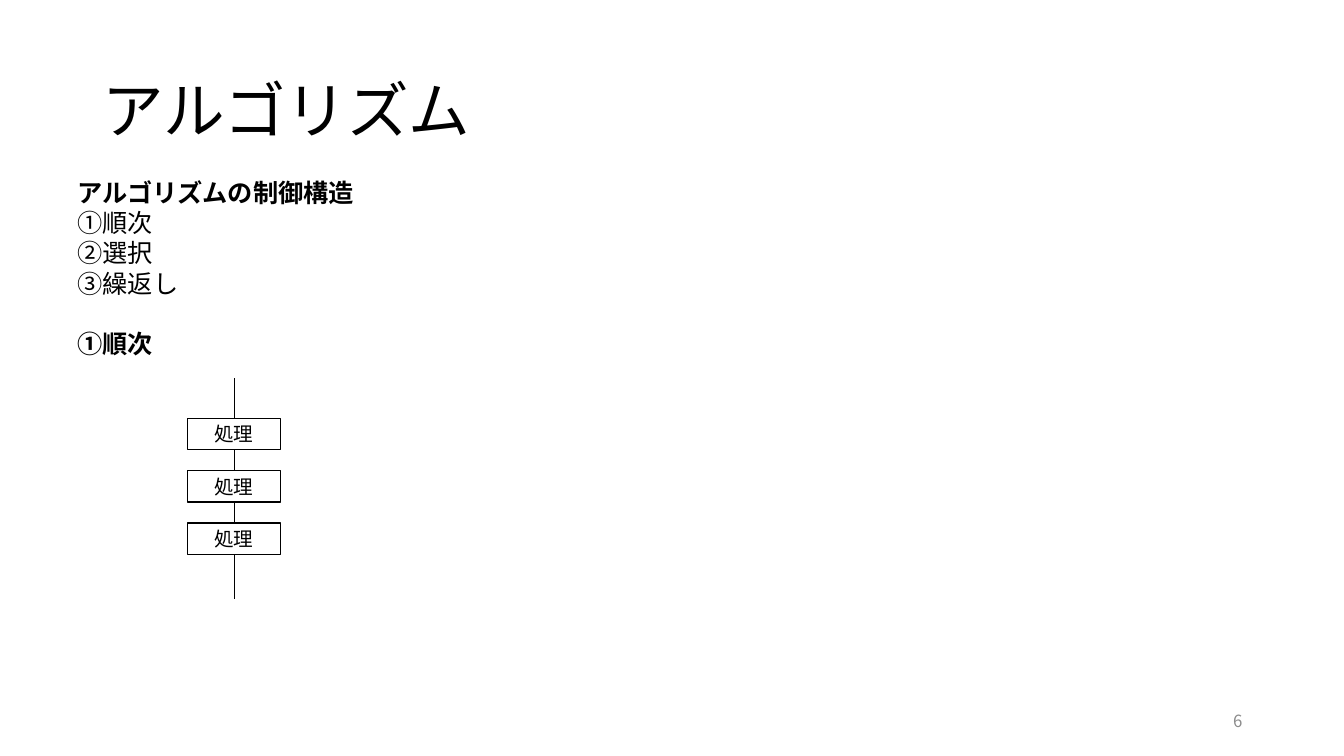
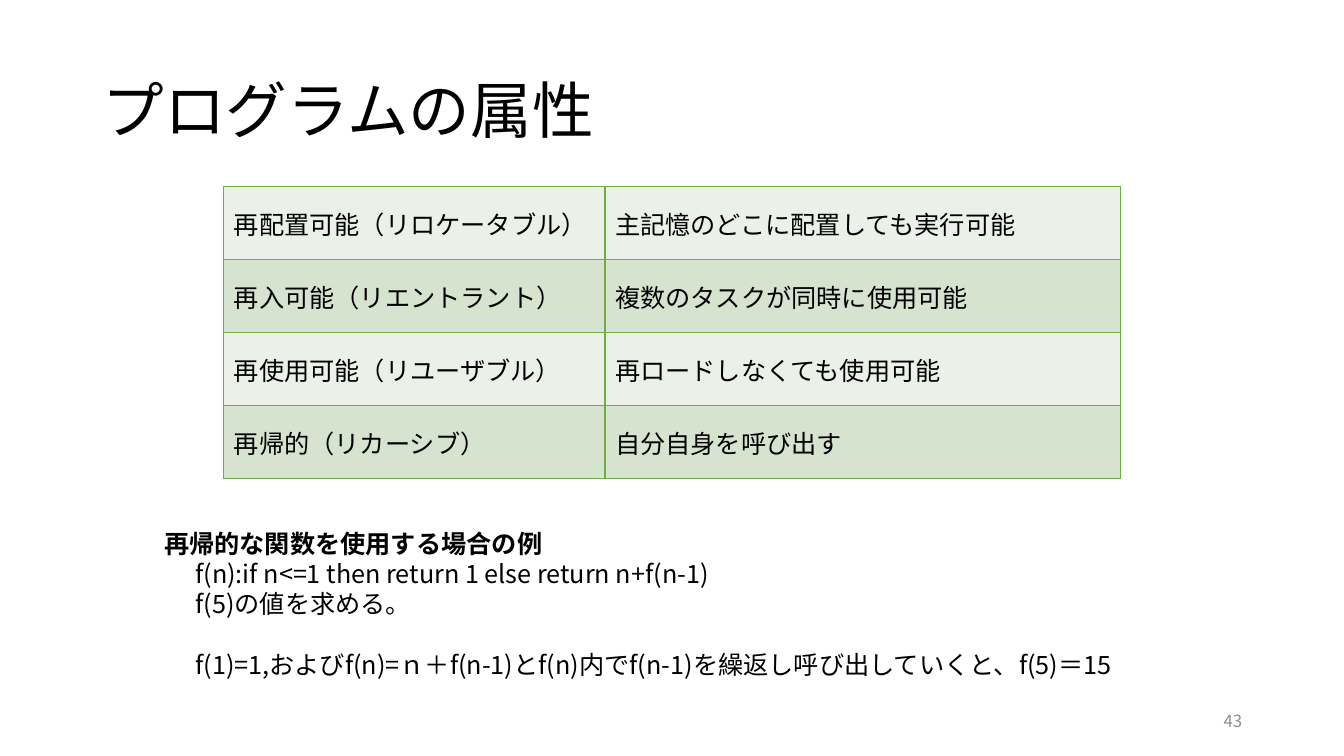
from lxml import etree
from pptx import Presentation
from pptx.dml.color import RGBColor
from pptx.enum.shapes import MSO_CONNECTOR, MSO_SHAPE
from pptx.enum.text import MSO_ANCHOR, PP_ALIGN
from pptx.oxml.ns import qn
from pptx.util import Inches, Pt

RECTANGLE, STRAIGHT = MSO_SHAPE.RECTANGLE, MSO_CONNECTOR.STRAIGHT
TOP, MIDDLE = MSO_ANCHOR.TOP, MSO_ANCHOR.MIDDLE
LEFT, CENTER, RIGHT = PP_ALIGN.LEFT, PP_ALIGN.CENTER, PP_ALIGN.RIGHT

JAPANESE_FONT, LATIN_FONT = "Noto Sans CJK JP", "Arial"
BLACK, WHITE, GRAY, GREEN = "000000", "FFFFFF", "8C8C8C", "70AD47"
ROW_FILLS = ["EBF1E9", "D5E3CF"]
BLANK_LAYOUT = 6
SECTION_GAP = 21.6

CONTROL_LINES = [
    ("アルゴリズムの制御構造", {"bold": True}),
    ("①順次", {}),
    ("②選択", {}),
    ("③繰返し", {}),
    ("①順次", {"bold": True, "before": SECTION_GAP}),
]
SEQUENCE_STEPS = ["処理", "処理", "処理"]
ATTRIBUTES = [
    ("再配置可能（リロケータブル）", "主記憶のどこに配置しても実行可能"),
    ("再入可能（リエントラント）", "複数のタスクが同時に使用可能"),
    ("再使用可能（リユーザブル）", "再ロードしなくても使用可能"),
    ("再帰的（リカーシブ）", "自分自身を呼び出す"),
]
RECURSION_LINES = [
    ("再帰的な関数を使用する場合の例", {"bold": True}),
    ("f(n):if n<=1 then return 1 else return n+f(n-1)", {"indent": 0.31}),
    ("f(5)の値を求める。", {"indent": 0.31}),
    ("f(1)=1,およびf(n)=ｎ＋f(n-1)とf(n)内でf(n-1)を繰返し呼び出していくと、f(5)＝15",
     {"indent": 0.31, "before": SECTION_GAP}),
]


def color(value):
    return RGBColor.from_string(value)


def write(paragraph, text, size=18, font=JAPANESE_FONT, fill=BLACK, bold=False,
          align=LEFT, before=0, spacing=None, indent=0):
    paragraph.alignment = align
    paragraph.line_spacing = spacing
    if before:
        paragraph.space_before = Pt(before)
    if indent:
        paragraph._p.get_or_add_pPr().set("marL", str(Inches(indent)))
    run = paragraph.add_run()
    run.text = text
    run.font.size = Pt(size)
    run.font.bold = bold
    run.font.name = font
    run.font.color.rgb = color(fill)
    east_asian = etree.SubElement(run._r.get_or_add_rPr(), qn("a:ea"))
    east_asian.set("typeface", JAPANESE_FONT)


def add_text(slide, box, lines, anchor=TOP, **shared):
    frame = slide.shapes.add_textbox(*map(Inches, box)).text_frame
    frame.word_wrap = True
    frame.vertical_anchor = anchor
    for index, (text, style) in enumerate(lines):
        paragraph = frame.add_paragraph() if index else frame.paragraphs[0]
        write(paragraph, text, **shared, **style)


def add_slide(presentation, title, number):
    slide = presentation.slides.add_slide(presentation.slide_layouts[BLANK_LAYOUT])
    add_text(slide, (0.92, 0.4, 11.5, 1.45), [(title, {})], MIDDLE, size=44, spacing=0.9)
    add_text(slide, (9.42, 6.95, 3, 0.4), [(number, {})], MIDDLE,
             size=12, fill=GRAY, align=RIGHT)
    return slide


def add_sequence(slide, steps):
    center, top, width, height, pitch = 2.32, 4.15, 0.92, 0.31, 0.52
    shapes = slide.shapes.add_group_shape().shapes
    flow = shapes.add_connector(STRAIGHT, Inches(center), Inches(3.75),
                                Inches(center), Inches(5.94))
    flow.line.color.rgb = color(BLACK)
    flow.line.width = Pt(0.5)
    etree.SubElement(flow._element.spPr, qn("a:effectLst"))
    for index, text in enumerate(steps):
        box = (center - width / 2, top + index * pitch, width, height)
        shape = shapes.add_shape(RECTANGLE, *map(Inches, box))
        shape.shadow.inherit = False
        shape.fill.solid()
        shape.fill.fore_color.rgb = color(WHITE)
        shape.line.color.rgb = color(BLACK)
        shape.line.width = Pt(1)
        shape.text_frame.vertical_anchor = MIDDLE
        write(shape.text_frame.paragraphs[0], text, size=14, align=CENTER)


def set_borders(cell, line_color, width):
    properties = cell._tc.get_or_add_tcPr()
    for side in ("a:lnL", "a:lnR", "a:lnT", "a:lnB"):
        border = etree.SubElement(properties, qn(side), w=str(Pt(width)))
        fill = etree.SubElement(border, qn("a:solidFill"))
        etree.SubElement(fill, qn("a:srgbClr"), val=line_color)


def add_attribute_table(slide, rows):
    widths, row_height = (3.78, 5.11), 0.725
    box = (2.22, 1.85, sum(widths), row_height * len(rows))
    table = slide.shapes.add_table(len(rows), len(widths), *map(Inches, box)).table
    table.first_row = table.horz_banding = False
    for column, width in zip(table.columns, widths):
        column.width = Inches(width)
    for row_index, texts in enumerate(rows):
        for column_index, text in enumerate(texts):
            cell = table.cell(row_index, column_index)
            cell.vertical_anchor = MIDDLE
            set_borders(cell, GREEN, 1)
            cell.fill.solid()
            cell.fill.fore_color.rgb = color(ROW_FILLS[row_index % 2])
            write(cell.text_frame.paragraphs[0], text)


def main():
    """Build the algorithm and program attribute slides."""
    presentation = Presentation()
    presentation.slide_width = Inches(13.33)
    presentation.slide_height = Inches(7.5)

    algorithm = add_slide(presentation, "アルゴリズム", "6")
    add_text(algorithm, (0.67, 1.71, 11.99, 2.22), CONTROL_LINES, font=LATIN_FONT)
    add_sequence(algorithm, SEQUENCE_STEPS)

    attributes = add_slide(presentation, "プログラムの属性", "43")
    add_attribute_table(attributes, ATTRIBUTES)
    add_text(attributes, (1.53, 5.19, 10.57, 1.92), RECURSION_LINES)

    presentation.save("out.pptx")


if __name__ == "__main__":
    main()
